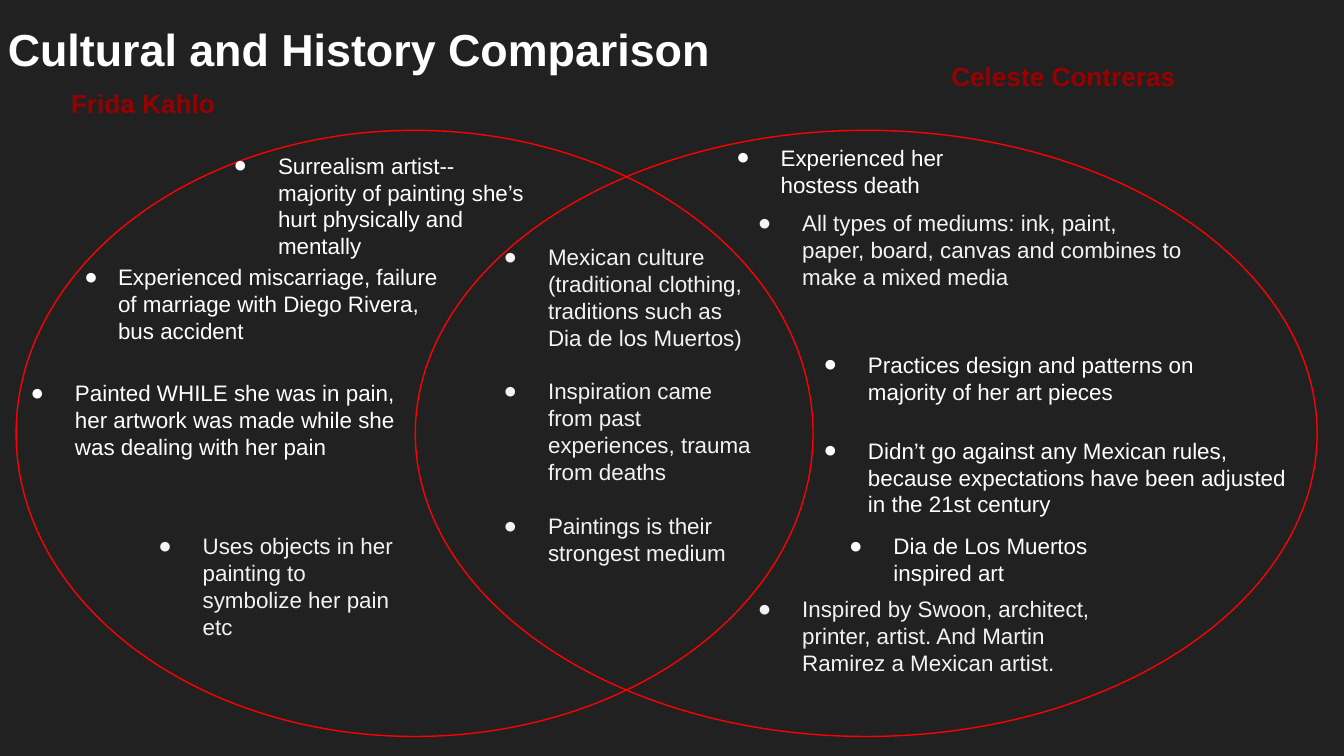
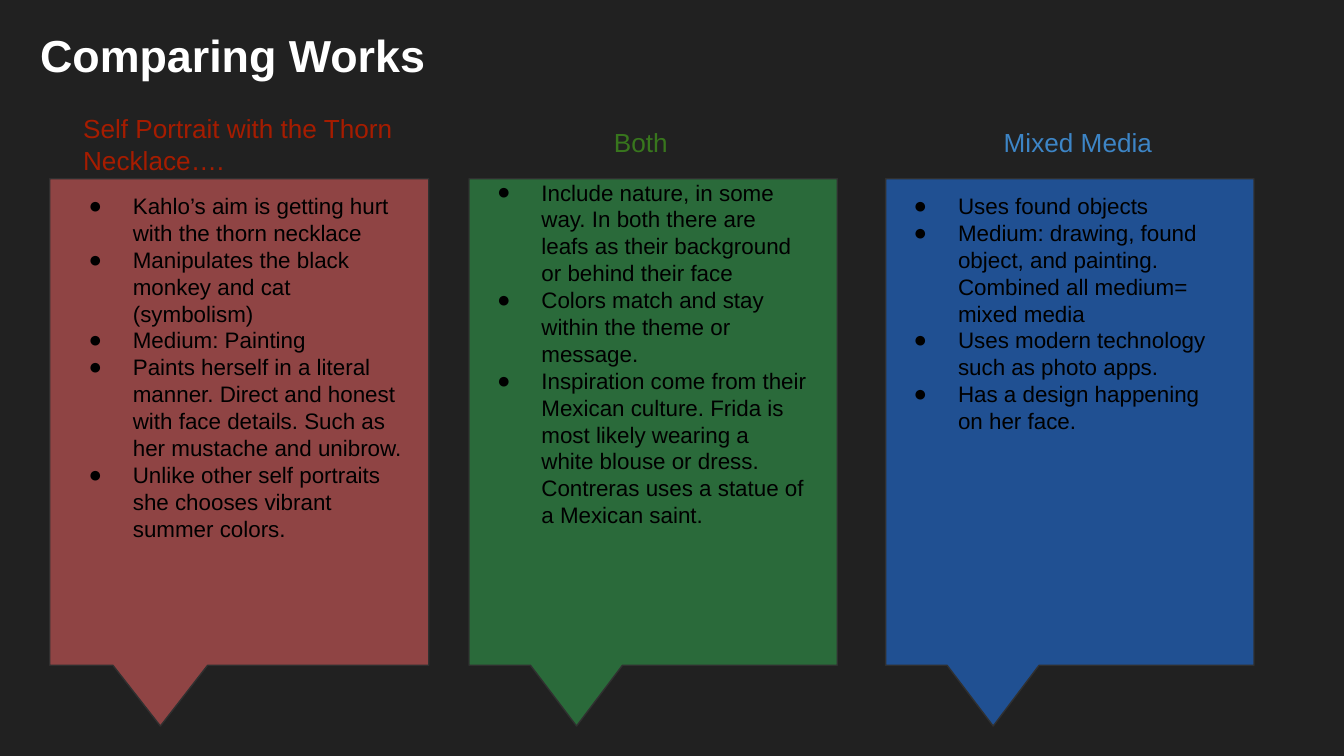
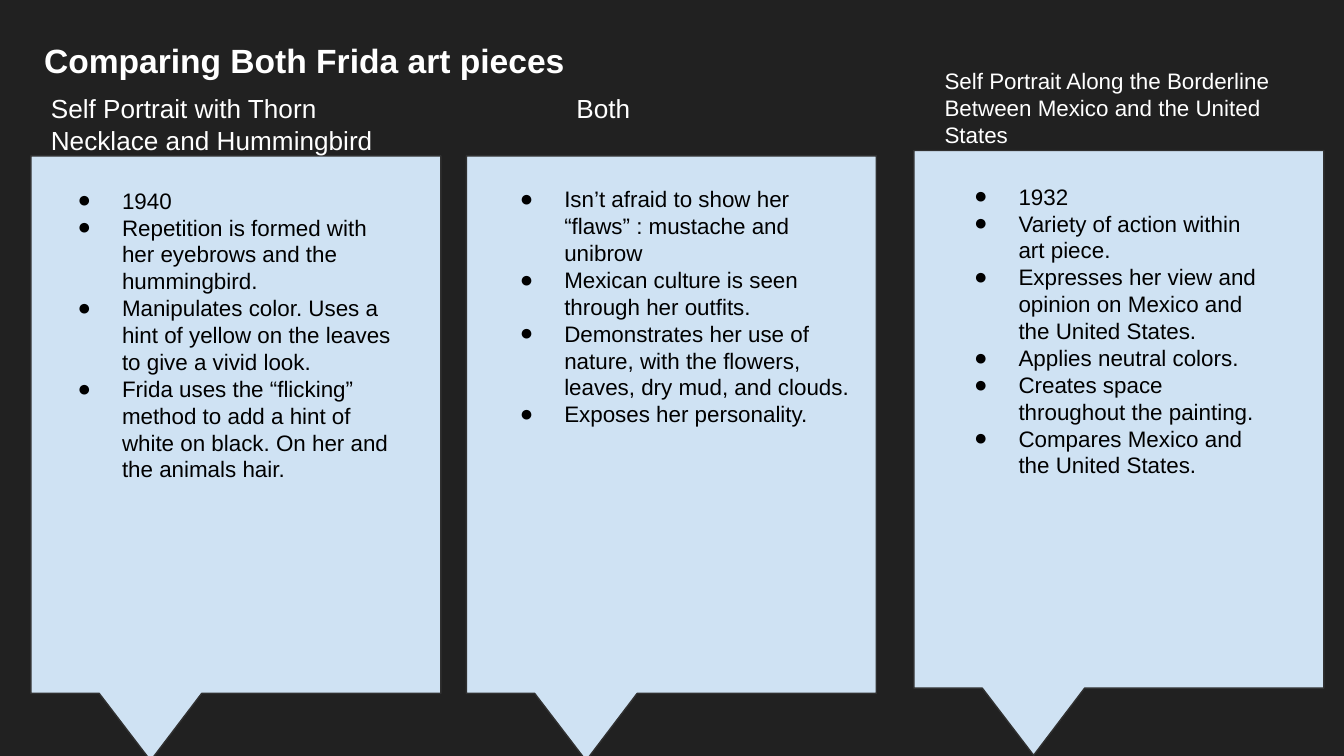
from lxml import etree
from pptx import Presentation
from pptx.dml.color import RGBColor
from pptx.enum.shapes import MSO_SHAPE
from pptx.enum.text import MSO_ANCHOR
from pptx.oxml.ns import qn
from pptx.util import Inches, Pt

ELLIPSE = MSO_SHAPE.OVAL
CALLOUT = MSO_SHAPE.RECTANGULAR_CALLOUT
TOP = MSO_ANCHOR.TOP

FONT = "Arial"
BACKGROUND = RGBColor(0x21, 0x21, 0x21)
WHITE = RGBColor(0xFF, 0xFF, 0xFF)
OFF_WHITE = RGBColor(0xF3, 0xF3, 0xF3)
BLACK = RGBColor(0x00, 0x00, 0x00)
RED = RGBColor(0xFF, 0x00, 0x00)
DARK_RED = RGBColor(0x98, 0x00, 0x00)
BRICK = RGBColor(0xA6, 0x1C, 0x00)
LEAF = RGBColor(0x38, 0x76, 0x1D)
SKY = RGBColor(0x3D, 0x85, 0xC6)
ROSE_PANEL = RGBColor(0xA5, 0x4B, 0x4B)
GREEN_PANEL = RGBColor(0x2F, 0x89, 0x45)
BLUE_PANEL = RGBColor(0x20, 0x5B, 0xAD)
PALE_PANEL = RGBColor(0xCF, 0xE2, 0xF3)
OUTLINE = RGBColor(0x30, 0x30, 0x30)

BODY_SIZE = 12
HEADING_SIZE = 14
BULLET_LEFT = 0.5
BULLET_HANG = 0.33
BLANK_LINE = 14.4  # points between the shared traits
WRAP_TRIM = Pt(0.3)  # taken off text widths so that tight lines wrap

# Boxes are (left, top, width, height) in inches
# Slide 1: Venn diagram
VENN_TITLE = ("Cultural and History Comparison", (-0.04, 0.06, 9.32, 0.63))
VENN_CIRCLES = [(0.12, 0.97, 5.93, 4.51), (3.09, 0.97, 6.71, 4.51)]
ARTISTS = [
    ("Frida Kahlo", (0.43, 0.55, 3.11, 0.42)),
    ("Celeste Contreras", (6.98, 0.35, 2.82, 0.42)),
]
SHARED_BOX = (3.48, 1.71, 2.29, 2.84)
SHARED_TRAITS = [
    "Mexican culture (traditional clothing, traditions such as Dia de los Muertos)",
    "Inspiration came from past experiences, trauma from deaths",
    "Paintings is their strongest medium",
]
# Text, box, colour, bullet hang
TRAITS = [
    ("Surrealism artist-- majority of painting she’s hurt physically and mentally",
     (1.47, 1.03, 2.6, 1.06), WHITE, BULLET_HANG),
    ("Experienced miscarriage, failure of marriage with Diego Rivera, bus accident",
     (0.28, 1.86, 3.11, 0.82), WHITE, 0.25),
    ("Experienced her hostess death", (5.21, 0.97, 2.48, 0.63), WHITE, BULLET_HANG),
    ("All types of mediums: ink, paint, paper, board, canvas and combines to make "
     "a mixed media", (5.37, 1.46, 3.54, 0.63), OFF_WHITE, BULLET_HANG),
    ("Practices design and patterns on majority of her art pieces",
     (5.86, 2.51, 3.54, 0.71), WHITE, BULLET_HANG),
    ("Didn’t go against any Mexican rules, because expectations have been adjusted "
     "in the 21st century", (5.86, 3.15, 3.94, 0.71), WHITE, BULLET_HANG),
    ("Dia de Los Muertos inspired art", (6.05, 3.86, 2.72, 0.63), WHITE, BULLET_HANG),
    ("Painted WHILE she was in pain, her artwork was made while she was dealing "
     "with her pain", (-0.04, 2.72, 3.29, 0.82), WHITE, BULLET_HANG),
    ("Uses objects in her painting to symbolize her pain etc",
     (0.91, 3.86, 2.15, 0.47), OFF_WHITE, BULLET_HANG),
    ("Inspired by Swoon, architect, printer, artist. And Martin Ramirez a Mexican "
     "artist.", (5.37, 4.33, 2.98, 0.53), OFF_WHITE, BULLET_HANG),
]

# Slides 2 and 3: three callout columns each
COLUMN_SLIDES = [
    {
        "title": ("Comparing Works", (0.2, 0.11, 9.32, 0.63), 24),
        "columns": [
            {
                "panel": ((0.37, 1.33, 2.82, 3.62), ROSE_PANEL, 84),
                "heading": ("Self Portrait with the Thorn Necklace….",
                            (0.52, 0.74, 2.68, 0.33), BRICK, HEADING_SIZE),
                "points_box": (0.39, 1.33, 2.74, 4.06),
                "points": [
                    "Kahlo’s aim is getting hurt with the thorn necklace",
                    "Manipulates the black monkey and cat (symbolism)",
                    "Medium: Painting",
                    "Paints herself in a literal manner. Direct and honest with face "
                    "details. Such as her mustache and unibrow.",
                    "Unlike other self portraits she chooses vibrant summer colors.",
                ],
            },
            {
                "panel": ((3.49, 1.33, 2.74, 3.62), GREEN_PANEL, 70),
                "heading": ("Both", (4.47, 0.84, 1.52, 0.39), LEAF, HEADING_SIZE),
                "points_box": (3.43, 1.23, 2.68, 3.98),
                "points": [
                    "Include nature, in some way. In both there are leafs as their "
                    "background or behind their face",
                    "Colors match and stay within the theme or message.",
                    "Inspiration come from their Mexican culture. Frida is most likely "
                    "wearing a white blouse or dress. Contreras uses a statue of a "
                    "Mexican saint.",
                ],
            },
            {
                "panel": ((6.59, 1.33, 2.74, 3.62), BLUE_PANEL, 81),
                "heading": ("Mixed Media", (7.37, 0.84, 1.52, 0.28), SKY, HEADING_SIZE),
                "points_box": (6.53, 1.33, 2.68, 3.98),
                "points": [
                    "Uses found objects",
                    "Medium: drawing, found object, and painting. Combined all medium= "
                    "mixed media",
                    "Uses modern technology such as photo apps.",
                    "Has a design happening on her face.",
                ],
            },
        ],
    },
    {
        "title": ("Comparing Both Frida art pieces", (0.23, 0.2, 4.25, 0.33), 18),
        "columns": [
            {
                "panel": ((0.23, 1.16, 3.05, 4), PALE_PANEL, 100),
                "heading": ("Self Portrait with Thorn Necklace and Hummingbird",
                            (0.28, 0.59, 2.94, 0.26), WHITE, HEADING_SIZE),
                "points_box": (0.31, 1.29, 2.79, 3.56),
                "points": [
                    "1940",
                    "Repetition is formed with her eyebrows and the hummingbird.",
                    "Manipulates color. Uses a hint of yellow on the leaves to give a "
                    "vivid look.",
                    "Frida uses the “flicking” method to add a hint of white on black. "
                    "On her and the animals hair.",
                ],
            },
            {
                "panel": ((3.47, 1.16, 3.05, 4), PALE_PANEL, 100),
                "heading": ("Both", (4.19, 0.59, 1.62, 0.46), WHITE, HEADING_SIZE),
                "points_box": (3.6, 1.28, 2.88, 3.56),
                "points": [
                    "Isn’t afraid to show her “flaws” : mustache and unibrow",
                    "Mexican culture is seen through her outfits.",
                    "Demonstrates her use of nature, with the flowers, leaves, dry mud, "
                    "and clouds.",
                    "Exposes her personality.",
                ],
            },
            {
                "panel": ((6.8, 1.12, 3.05, 4), PALE_PANEL, 100),
                "heading": ("Self Portrait Along the Borderline Between Mexico and the "
                            "United States", (6.93, 0.4, 2.79, 0.46), WHITE, BODY_SIZE),
                "points_box": (6.98, 1.26, 2.5, 3.59),
                "points": [
                    "1932",
                    "Variety of action within art piece.",
                    "Expresses her view and opinion on Mexico and the United States.",
                    "Applies neutral colors.",
                    "Creates space throughout the painting.",
                    "Compares Mexico and the United States.",
                ],
            },
        ],
    },
]


def inches(box):
    return [Inches(length) for length in box]


def add_slide(presentation):
    slide = presentation.slides.add_slide(presentation.slide_layouts[6])
    fill = slide.background.fill
    fill.solid()
    fill.fore_color.rgb = BACKGROUND
    return slide


def set_bullet(paragraph, hang):
    properties = paragraph._p.get_or_add_pPr()
    properties.set("marL", str(Inches(BULLET_LEFT)))
    properties.set("indent", str(-Inches(hang)))
    etree.SubElement(properties, qn("a:buFont")).set("typeface", FONT)
    etree.SubElement(properties, qn("a:buChar")).set("char", "●")


def add_text(slide, box, lines, color, size=BODY_SIZE, bold=False, hang=None, gap=0):
    """Add a text box; a hang value turns its lines into bullets."""
    left, top, width, height = inches(box)
    frame = slide.shapes.add_textbox(left, top, width - WRAP_TRIM, height).text_frame
    frame.word_wrap = True
    frame.vertical_anchor = TOP
    frame.margin_left = frame.margin_right = Inches(0.1)
    frame.margin_top = frame.margin_bottom = Inches(0.1)
    for index, line in enumerate(lines):
        paragraph = frame.add_paragraph() if index else frame.paragraphs[0]
        if index and gap:
            paragraph.space_before = Pt(gap)
        if hang is not None:
            set_bullet(paragraph, hang)
        run = paragraph.add_run()
        run.text = line
        run.font.name = FONT
        run.font.size = Pt(size)
        run.font.bold = bold
        run.font.color.rgb = color


def add_title(slide, text, box, size=24):
    add_text(slide, box, [text], WHITE, size, bold=True)


def add_outlined_shape(slide, kind, box, line_color):
    shape = slide.shapes.add_shape(kind, *inches(box))
    shape.shadow.inherit = False
    shape.line.color.rgb = line_color
    shape.line.width = Pt(0.75)
    return shape


def add_callout(slide, box, color, opacity):
    callout = add_outlined_shape(slide, CALLOUT, box, OUTLINE)
    callout.adjustments[0] = -0.208
    callout.adjustments[1] = 0.625
    callout.fill.solid()
    callout.fill.fore_color.rgb = color
    if opacity < 100:
        fill_color = callout._element.spPr.find(qn("a:solidFill"))[0]
        etree.SubElement(fill_color, qn("a:alpha")).set("val", str(opacity * 1000))


def build_venn_slide(presentation):
    slide = add_slide(presentation)
    add_title(slide, *VENN_TITLE)
    for box in VENN_CIRCLES:
        add_outlined_shape(slide, ELLIPSE, box, RED).fill.background()
    add_text(slide, SHARED_BOX, SHARED_TRAITS, OFF_WHITE,
             hang=BULLET_HANG, gap=BLANK_LINE)
    for artist, box in ARTISTS:
        add_text(slide, box, [artist], DARK_RED, HEADING_SIZE, bold=True)
    for trait, box, color, hang in TRAITS:
        add_text(slide, box, [trait], color, hang=hang)


def build_column_slide(presentation, content):
    slide = add_slide(presentation)
    add_title(slide, *content["title"])
    for column in content["columns"]:
        add_callout(slide, *column["panel"])
        heading, box, color, size = column["heading"]
        add_text(slide, box, [heading], color, size)
        add_text(slide, column["points_box"], column["points"], BLACK, hang=BULLET_HANG)


def main():
    presentation = Presentation()
    presentation.slide_width = Inches(10)
    presentation.slide_height = Inches(10) * 9 // 16  # widescreen
    build_venn_slide(presentation)
    for content in COLUMN_SLIDES:
        build_column_slide(presentation, content)
    presentation.save("out.pptx")


if __name__ == "__main__":
    main()
